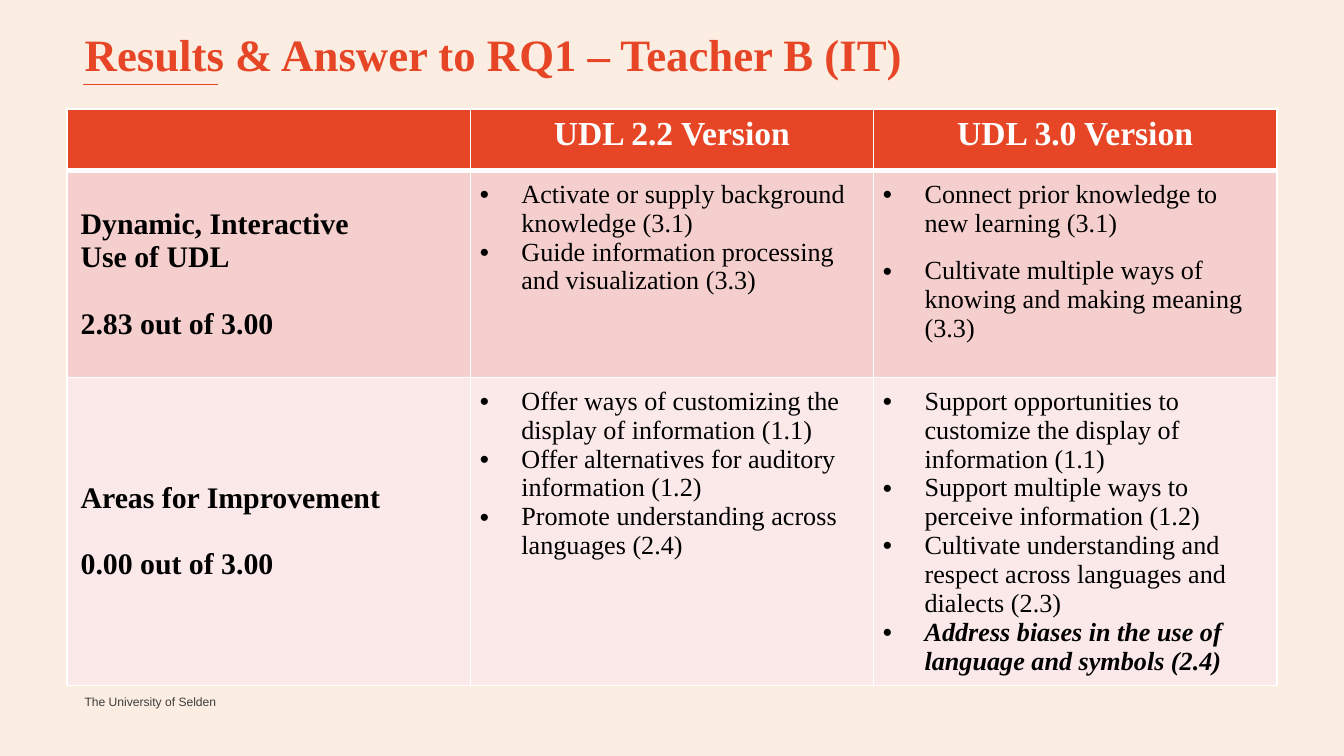
from lxml import etree
from pptx import Presentation
from pptx.dml.color import RGBColor
from pptx.enum.shapes import MSO_CONNECTOR
from pptx.enum.text import MSO_ANCHOR, MSO_AUTO_SIZE, PP_ALIGN
from pptx.oxml.ns import qn
from pptx.util import Inches, Pt

LEFT, CENTER = PP_ALIGN.LEFT, PP_ALIGN.CENTER
TOP, MIDDLE = MSO_ANCHOR.TOP, MSO_ANCHOR.MIDDLE
STRAIGHT = MSO_CONNECTOR.STRAIGHT
NO_FIT = MSO_AUTO_SIZE.NONE
TITLE_ONLY = 5

THEME = {
    "background": "FCEDE2", "accent": "E64626", "white": "FFFFFF",
    "bands": ["F5CFCD", "FAE9E8"],
    "title": {"name": "Times New Roman", "size": 24, "bold": True, "color": "E64626"},
    "header": {"name": "Times New Roman", "size": 18, "bold": True, "color": "FFFFFF"},
    "label": {"name": "Times New Roman", "size": 16, "bold": True, "color": "000000"},
    "body": {"name": "Times New Roman", "size": 14, "bold": False, "color": "000000"},
    "footer": {"name": "Arial", "size": 6.5, "bold": False, "color": "3C3C3B"},
}

SLIDE_WIDTH = 10
SLIDE_HEIGHT = SLIDE_WIDTH * 9 / 16
TITLE = "Results & Answer to RQ1 – Teacher B (IT)"
FOOTER = "The University of Selden"
HEADERS = ["", "UDL 2.2 Version", "UDL 3.0 Version"]
ROWS = [
    {"label": "Dynamic, Interactive Use of UDL", "score": "2.83 out of 3.00",
     "points": [
         ["Activate or supply background knowledge (3.1)",
          "Guide information processing and visualization (3.3)"],
         ["Connect prior knowledge to new learning (3.1)",
          "Cultivate multiple ways of knowing and making meaning (3.3)"]],
     "gaps": [0, 10]},
    {"label": "Areas for Improvement", "score": "0.00 out of 3.00",
     "points": [
         ["Offer ways of customizing the display of information (1.1)",
          "Offer alternatives for auditory information (1.2)",
          "Promote understanding across languages (2.4)"],
         ["Support opportunities to customize the display of information (1.1)",
          "Support multiple ways to perceive information (1.2)",
          "Cultivate understanding and respect across languages and dialects (2.3)",
          "Address biases in the use of language and symbols (2.4)"]],
     "gaps": [0, 0]},
]
EMPHASIS = {"Address biases in the use of language and symbols (2.4)"}
COLUMN_WIDTH = 3
ROW_HEIGHTS = [0.46, 1.54, 2.29]


def set_values(target, values):
    for name, value in values.items():
        setattr(target, name, value)


def write(frame, lines, style, **para_format):
    paras = []
    for index, line in enumerate(lines):
        para = frame.add_paragraph() if index else frame.paragraphs[0]
        set_values(para, para_format)
        span = para.add_run()
        span.text = line
        strong = line in EMPHASIS
        set_values(span.font, {"name": style["name"], "size": Pt(style["size"]),
                               "bold": strong or style["bold"], "italic": strong})
        span.font.color.rgb = RGBColor.from_string(style["color"])
        paras.append(para)
    return paras


def add_bullet(para):
    properties = para._p.get_or_add_pPr()
    properties.set("marL", str(Inches(0.31)))
    properties.set("indent", str(-Inches(0.31)))
    etree.SubElement(properties, qn("a:buFont")).set("typeface", "Arial")
    etree.SubElement(properties, qn("a:buChar")).set("char", "•")


def format_cell(cell, color, **widths):
    properties = cell._tc.get_or_add_tcPr()
    for side in ("lnL", "lnR", "lnT", "lnB"):
        border = etree.SubElement(properties, qn(f"a:{side}"), w=str(Pt(widths.get(side, 1))))
        paint = etree.SubElement(border, qn("a:solidFill"))
        etree.SubElement(paint, qn("a:srgbClr"), val=THEME["white"])
    cell.fill.solid()
    cell.fill.fore_color.rgb = RGBColor.from_string(color)


def set_margins(target, size):
    for side in ("left", "right", "top", "bottom"):
        setattr(target, f"margin_{side}", Inches(size))


def place_text(box, text, style, bounds):
    for name, value in zip(("left", "top", "width", "height"), bounds):
        setattr(box, name, Inches(value))
    frame = box.text_frame
    set_margins(frame, 0)
    set_values(frame, {"word_wrap": True, "auto_size": NO_FIT, "vertical_anchor": TOP})
    write(frame, [text], style, alignment=LEFT)


def add_rule(page):
    rule = page.shapes.add_connector(
        STRAIGHT, Inches(0.62), Inches(0.63), Inches(1.62), Inches(0.63))
    rule.line.color.rgb = RGBColor.from_string(THEME["accent"])
    rule.line.width = Pt(0.75)
    etree.SubElement(rule._element.spPr, qn("a:effectLst"))


def add_results(page):
    table = page.shapes.add_table(
        len(ROWS) + 1, len(HEADERS), Inches(0.5), Inches(0.81),
        Inches(COLUMN_WIDTH * len(HEADERS)), Inches(sum(ROW_HEIGHTS))).table
    for column in table.columns:
        column.width = Inches(COLUMN_WIDTH)
    for row, height in zip(table.rows, ROW_HEIGHTS):
        row.height = Inches(height)

    for index, header in enumerate(HEADERS):
        cell = table.cell(0, index)
        format_cell(cell, THEME["accent"], lnB=3)
        if header:
            write(cell.text_frame, [header], THEME["header"], alignment=CENTER)

    for number, (entry, band) in enumerate(zip(ROWS, THEME["bands"]), 1):
        top_border = 3 if number == 1 else 1
        label = table.cell(number, 0)
        format_cell(label, band, lnT=top_border)
        set_values(label, {"vertical_anchor": MIDDLE, "margin_right": Inches(0.57)})
        paras = write(label.text_frame, [entry["label"], entry["score"]], THEME["label"])
        paras[-1].space_before = Pt(18)
        for index, (points, gap) in enumerate(zip(entry["points"], entry["gaps"]), 1):
            cell = table.cell(number, index)
            format_cell(cell, band, lnT=top_border)
            set_margins(cell, 0.07)
            for para in write(cell.text_frame, points, THEME["body"], space_after=Pt(gap)):
                add_bullet(para)


def main():
    deck = Presentation()
    deck.slide_width, deck.slide_height = Inches(SLIDE_WIDTH), Inches(SLIDE_HEIGHT)
    page = deck.slides.add_slide(deck.slide_layouts[TITLE_ONLY])
    page.background.fill.solid()
    page.background.fill.fore_color.rgb = RGBColor.from_string(THEME["background"])
    place_text(page.shapes.title, TITLE, THEME["title"], (0.63, 0.2, 8.74, 0.4))
    add_rule(page)
    add_results(page)
    footer = page.shapes.add_textbox(0, 0, 0, 0)
    place_text(footer, FOOTER, THEME["footer"], (0.63, 5.17, 1.03, 0.13))
    deck.save("out.pptx")


if __name__ == "__main__":
    main()
